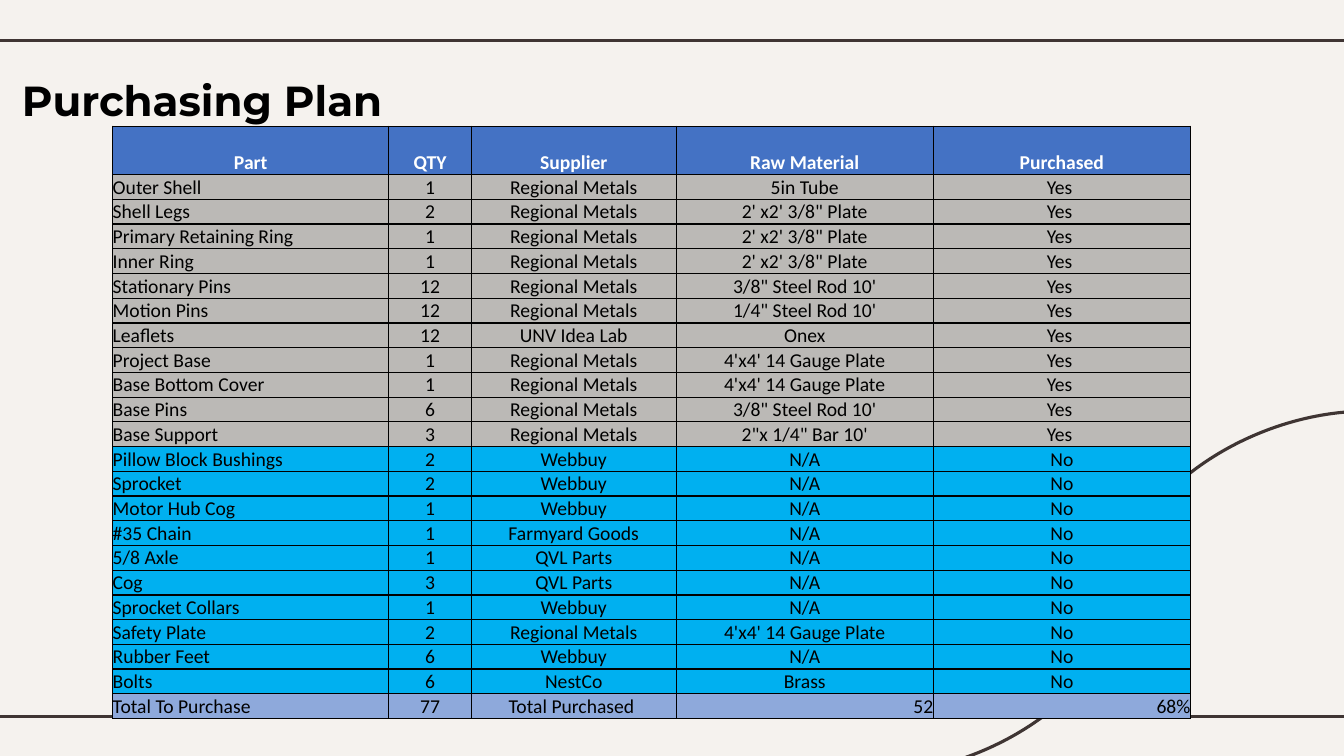
from lxml.etree import SubElement
from pptx import Presentation
from pptx.dml.color import RGBColor
from pptx.enum.shapes import MSO_CONNECTOR as Connector
from pptx.enum.text import MSO_ANCHOR as Anchor, PP_ALIGN as Align
from pptx.oxml import parse_xml
from pptx.oxml.ns import nsdecls, qn
from pptx.util import Cm, Pt

CREAM = RGBColor(0xF5, 0xF2, 0xEE)
BROWN = RGBColor(0x3F, 0x35, 0x33)
BLACK = RGBColor(0x00, 0x00, 0x00)
WHITE = RGBColor(0xFF, 0xFF, 0xFF)
HEADER_BLUE = RGBColor(0x44, 0x72, 0xC4)
BOUGHT_GREY = RGBColor(0xBB, 0xB9, 0xB6)
PENDING_BLUE = RGBColor(0x00, 0xB0, 0xF0)
TOTAL_BLUE = RGBColor(0x8E, 0xA9, 0xDB)

METALS, SHOP, PARTS = "Regional Metals", "Webbuy", "QVL Parts"
RING_PLATE = "2' x2' 3/8\" Plate"
BASE_PLATE = "4'x4' 14 Gauge Plate"
THICK_ROD = "3/8\" Steel Rod 10'"

HEADER = ("Part", "QTY", "Supplier", "Raw Material", "Purchased")
BOUGHT = [
    ("Outer Shell", "1", METALS, "5in Tube"),
    ("Shell Legs", "2", METALS, RING_PLATE),
    ("Primary Retaining Ring", "1", METALS, RING_PLATE),
    ("Inner Ring", "1", METALS, RING_PLATE),
    ("Stationary Pins", "12", METALS, THICK_ROD),
    ("Motion Pins", "12", METALS, "1/4\" Steel Rod 10'"),
    ("Leaflets", "12", "UNV Idea Lab", "Onex"),
    ("Project Base", "1", METALS, BASE_PLATE),
    ("Base Bottom Cover", "1", METALS, BASE_PLATE),
    ("Base Pins", "6", METALS, THICK_ROD),
    ("Base Support", "3", METALS, "2\"x 1/4\" Bar 10'"),
]
PENDING = [
    ("Pillow Block Bushings", "2", SHOP, "N/A"),
    ("Sprocket", "2", SHOP, "N/A"),
    ("Motor Hub Cog", "1", SHOP, "N/A"),
    ("#35 Chain", "1", "Farmyard Goods", "N/A"),
    ("5/8 Axle", "1", PARTS, "N/A"),
    ("Cog", "3", PARTS, "N/A"),
    ("Sprocket Collars", "1", SHOP, "N/A"),
    ("Safety Plate", "2", METALS, BASE_PLATE),
    ("Rubber Feet", "6", SHOP, "N/A"),
    ("Bolts", "6", "NestCo", "Brass"),
]
TOTAL = ("Total To Purchase", "77", "Total Purchased ", "52", "68%")

CENTRED = (Align.CENTER,) * 5
PART_ROW = (Align.LEFT,) + (Align.CENTER,) * 4
TOTAL_ROW = (Align.LEFT, Align.CENTER, Align.CENTER, Align.RIGHT, Align.RIGHT)


def write(frame, text, *, font="Calibri", size=14, color=BLACK, bold=False,
          align=Align.LEFT):
    para = frame.paragraphs[0]
    para.alignment = align
    span = para.add_run()
    span.text = text
    span.font.name = font
    span.font.size = Pt(size)
    span.font.bold = bold
    span.font.color.rgb = color


class PlanPage:
    def __init__(self, deck):
        self.page = deck.slides.add_slide(deck.slide_layouts[5])
        background = self.page.background.fill
        background.solid()
        background.fore_color.rgb = CREAM

    def title(self, text, left, top, width, height):
        box = self.page.shapes.title
        box.left, box.top, box.width, box.height = map(Cm, (left, top, width, height))
        frame = box.text_frame
        frame.word_wrap = True
        frame.vertical_anchor = Anchor.TOP
        frame.margin_left = frame.margin_right = Cm(0.25)
        frame.margin_top = frame.margin_bottom = Cm(0.25)
        write(frame, text, font="Montserrat", size=30, bold=True)

    def line(self, kind, *ends):
        connector = self.page.shapes.add_connector(kind, *map(Cm, ends))
        connector.line.color.rgb = BROWN
        connector.line.width = Pt(2.25)
        SubElement(connector._element.spPr, qn("a:effectLst"))

    def table(self, rows, left, top, widths, header_height, height):
        grid = self.page.shapes.add_table(
            len(rows), len(widths), Cm(left), Cm(top), Cm(sum(widths)), Cm(height)).table
        for column, width in zip(grid.columns, widths):
            column.width = Cm(width)
        row_height = (height - header_height) / (len(rows) - 1)
        for index, (values, fill, aligns, style) in enumerate(rows):
            grid.rows[index].height = Cm(row_height if index else header_height)
            for cell, text, align in zip(grid.rows[index].cells, values, aligns):
                self.cell(cell, text, fill, align=align, **style)

    def cell(self, cell, text, fill, **style):
        cell.margin_left = cell.margin_right = cell.margin_top = cell.margin_bottom = 0
        cell.vertical_anchor = Anchor.BOTTOM
        write(cell.text_frame, text, **style)
        properties = cell._tc.get_or_add_tcPr()
        for side in ("lnL", "lnR", "lnT", "lnB"):
            properties.append(parse_xml(
                f'<a:{side} {nsdecls("a")} w="{Pt(1)}"><a:solidFill>'
                f'<a:srgbClr val="{BLACK}"/></a:solidFill></a:{side}>'))
        cell.fill.solid()
        cell.fill.fore_color.rgb = fill


def main():
    deck = Presentation()
    deck.slide_width, deck.slide_height = Cm(33.87), Cm(19.05)
    plan = PlanPage(deck)
    for height in (1.02, 18.06):
        plan.line(Connector.STRAIGHT, -0.28, height, 34.14, height)
    plan.line(Connector.CURVE, 34.47, 10.36, 21.95, 19.51)
    plan.title("Purchasing Plan", 0.3, 1.63, 21.03, 2.13)

    rows = [(HEADER, HEADER_BLUE, CENTRED, {"color": WHITE, "bold": True})]
    for parts, answer, fill in ((BOUGHT, "Yes ", BOUGHT_GREY),
                                (PENDING, "No", PENDING_BLUE)):
        rows += [(part + (answer,), fill, PART_ROW, {}) for part in parts]
    rows.append((TOTAL, TOTAL_BLUE, TOTAL_ROW, {}))
    plan.table(rows, 2.84, 3.18, (6.96, 2.08, 5.16, 6.48, 6.48), 1.22, 14.94)
    deck.save("out.pptx")


if __name__ == "__main__":
    main()
